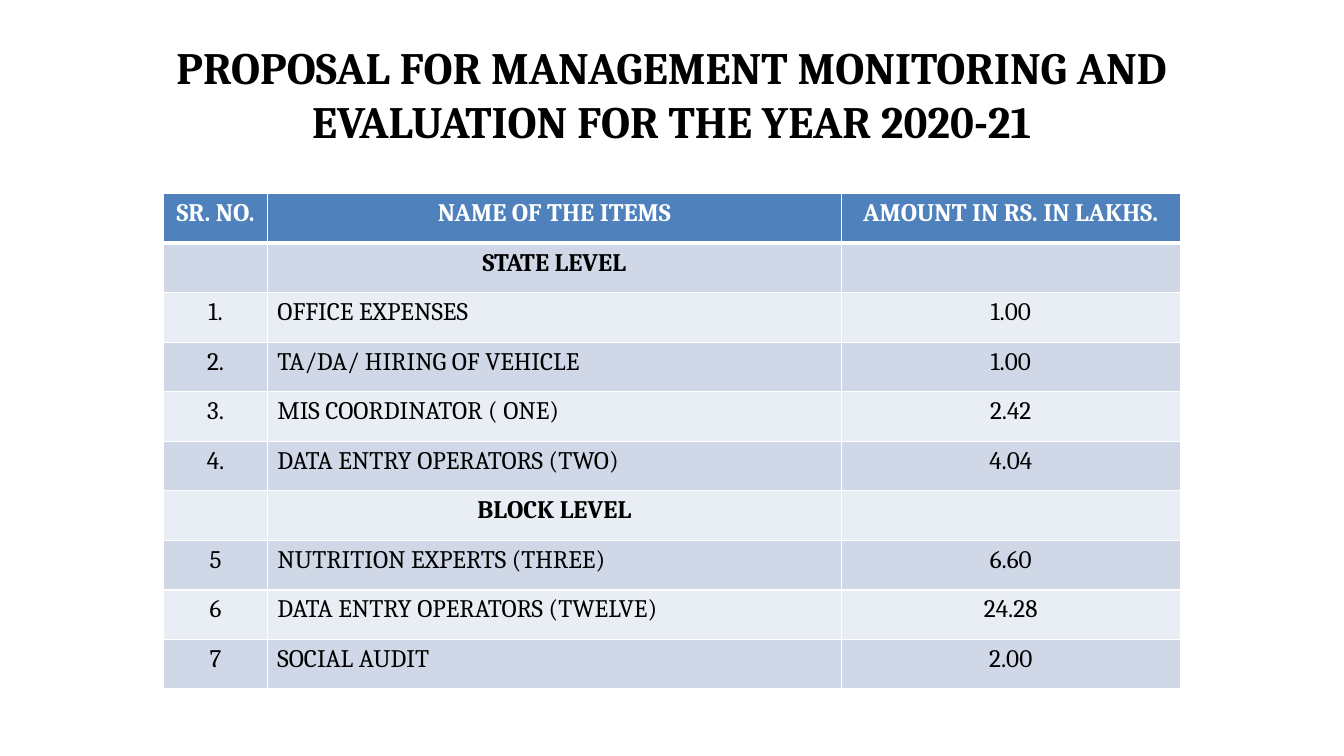
from lxml.etree import SubElement
from pptx import Presentation
from pptx.dml.color import RGBColor
from pptx.enum.text import MSO_ANCHOR, PP_ALIGN
from pptx.oxml.ns import qn
from pptx.util import Pt


def color(value):
    return RGBColor.from_string(value)


def write(frame, text, size, ink, bold, align):
    para = frame.paragraphs[0]
    para.alignment = align
    span = para.add_run()
    span.text = text
    span.font.color.rgb = color(ink)
    font_format = {"name": "Cambria", "size": Pt(size), "bold": bold}
    for name, value in font_format.items():
        setattr(span.font, name, value)


deck = Presentation()
deck.slide_width, deck.slide_height = Pt(960), Pt(540)
page = deck.slides.add_slide(deck.slide_layouts[6])

# Title
title = page.shapes.add_textbox(Pt(48), Pt(21.6), Pt(864), Pt(90))
title.text_frame.word_wrap = True
title.text_frame.vertical_anchor = MSO_ANCHOR.MIDDLE
write(title.text_frame,
      "PROPOSAL FOR MANAGEMENT MONITORING AND EVALUATION FOR THE YEAR 2020-21",
      32, "000000", True, PP_ALIGN.CENTER)

# Budget table: a row without a number is a section heading
budget = [
    ("SR. NO.", "NAME OF THE ITEMS", "AMOUNT IN RS. IN LAKHS."),
    ("", "STATE LEVEL", ""),
    ("1.", "OFFICE EXPENSES", "1.00"),
    ("2.", "TA/DA/ HIRING OF VEHICLE", "1.00"),
    ("3.", "MIS COORDINATOR ( ONE)", "2.42"),
    ("4.", "DATA ENTRY OPERATORS (TWO)", "4.04"),
    ("", "BLOCK LEVEL", ""),
    ("5", "NUTRITION EXPERTS (THREE)", "6.60"),
    ("6", "DATA ENTRY OPERATORS (TWELVE)", "24.28"),
    ("7", "SOCIAL AUDIT", "2.00"),
]
widths = [74, 410, 242]
row_height = 35.4
table = page.shapes.add_table(
    len(budget), len(widths), Pt(117), Pt(138.4),
    Pt(sum(widths)), Pt(row_height * len(budget))).table
for column, width in zip(table.columns, widths):
    column.width = Pt(width)

for row_index, entry in enumerate(budget):
    table.rows[row_index].height = Pt(row_height)
    is_header = row_index == 0
    is_heading = is_header or not entry[0]
    band = "4F81BD" if is_header else ("E9EDF4", "D0D8E8")[row_index % 2]

    for column_index, text in enumerate(entry):
        cell = table.cell(row_index, column_index)

        # White borders, thick between the header and the body
        thick_side = {0: "lnB", 1: "lnT"}.get(row_index)
        for side in ("lnL", "lnR", "lnT", "lnB"):
            width = Pt(3 if side == thick_side else 1)
            line = SubElement(cell._tc.get_or_add_tcPr(), qn(f"a:{side}"), w=str(width))
            paint = SubElement(line, qn("a:solidFill"))
            SubElement(paint, qn("a:srgbClr"), val="FFFFFF")
        cell.fill.solid()
        cell.fill.fore_color.rgb = color(band)

        # Item names stand left, everything else is centred
        if text:
            is_item = column_index == 1 and not is_heading
            write(cell.text_frame, text, 18, "FFFFFF" if is_header else "000000",
                  is_heading, PP_ALIGN.LEFT if is_item else PP_ALIGN.CENTER)

deck.save("out.pptx")
